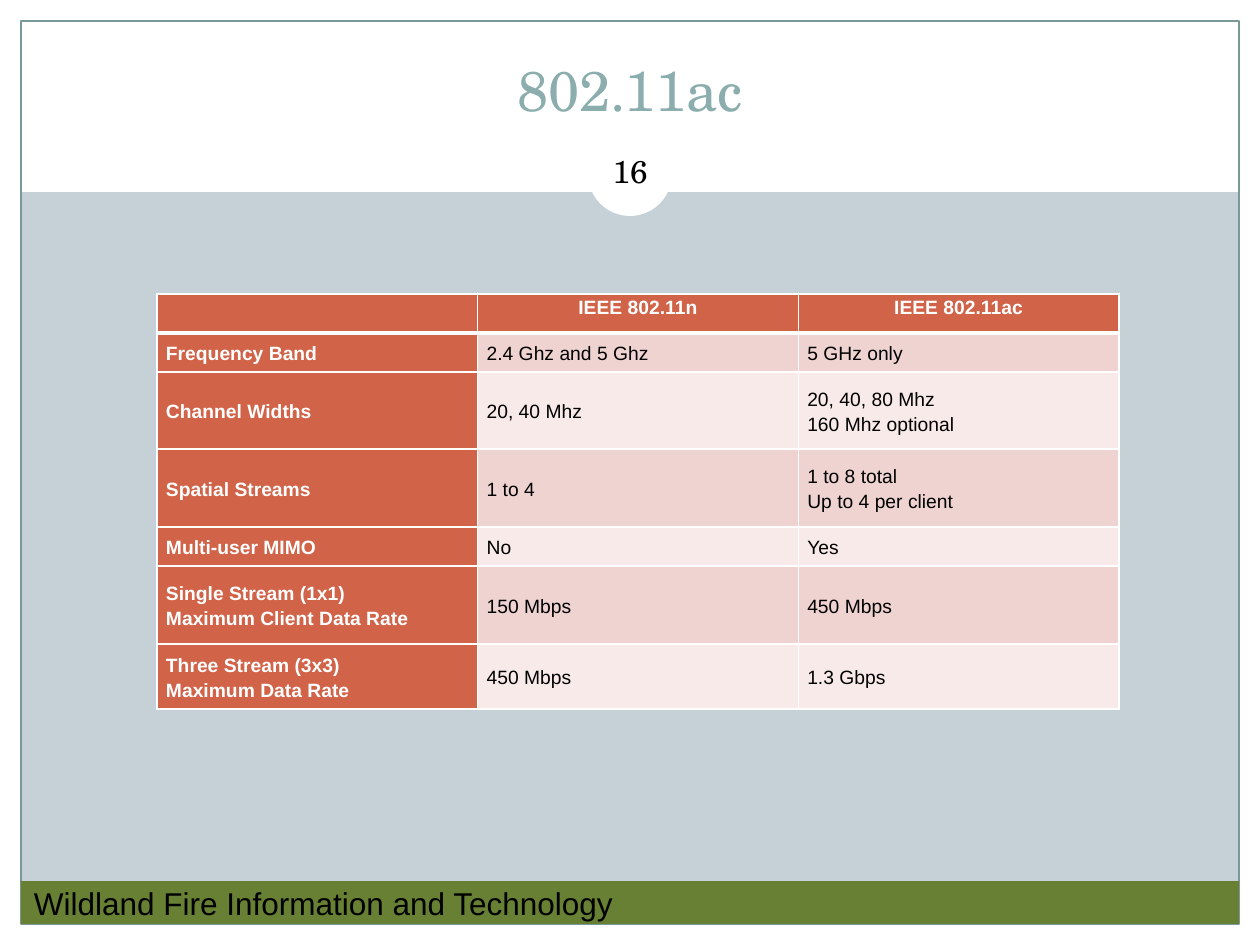
from lxml.etree import SubElement
from pptx import Presentation
from pptx.dml.color import RGBColor
from pptx.enum.shapes import MSO_SHAPE as Shape
from pptx.enum.text import MSO_ANCHOR as Anchor, PP_ALIGN as Align
from pptx.oxml.ns import qn
from pptx.util import Emu, Pt

WHITE = RGBColor(0xFF, 0xFF, 0xFF)
BLACK = RGBColor(0, 0, 0)
BACKGROUND = RGBColor(0xC5, 0xD1, 0xD7)
FRAME = RGBColor(0x7B, 0x98, 0x99)
GREEN = RGBColor(0x67, 0x80, 0x34)
TITLE = RGBColor(0x8C, 0xAD, 0xAE)
RUST = RGBColor(0xD1, 0x63, 0x49)
BANDS = (RGBColor(0xEE, 0xD3, 0xD0), RGBColor(0xF7, 0xEA, 0xE9))
SANS, SERIF = "Arial", "TeX Gyre Schola"

WIDTH, HEIGHT = 1260, 945
MARGIN = 21
ROW_HEIGHTS = (39, 39, 77, 78, 39, 78, 65)
ROWS = (
    ("", "IEEE 802.11n", "IEEE 802.11ac"),
    ("Frequency Band", "2.4 Ghz and 5 Ghz", "5 GHz only"),
    ("Channel Widths", "20, 40 Mhz", "20, 40, 80 Mhz\n160 Mhz optional"),
    ("Spatial Streams", "1 to 4", "1 to 8 total\nUp to 4 per client"),
    ("Multi-user MIMO", "No", "Yes"),
    ("Single Stream (1x1)\nMaximum Client Data Rate", "150 Mbps", "450 Mbps"),
    ("Three Stream (3x3)\nMaximum Data Rate", "450 Mbps", "1.3 Gbps"),
)


def px(length):
    return Emu(round(length * 914400 / 126))


def write(frame, text, *, size, font=SANS, color=BLACK, bold=False,
          align=Align.LEFT, anchor=Anchor.MIDDLE, spacing=None, insets=(13, 6)):
    frame.word_wrap = True
    frame.vertical_anchor = anchor
    frame.margin_left = frame.margin_right = px(insets[0])
    frame.margin_top = frame.margin_bottom = px(insets[1])
    for index, line in enumerate(text.split("\n")):
        paragraph = frame.add_paragraph() if index else frame.paragraphs[0]
        paragraph.alignment = align
        paragraph.line_spacing = spacing
        run = paragraph.add_run()
        run.text = line
        run.font.name, run.font.size = font, Pt(size)
        run.font.bold = bold
        run.font.color.rgb = color


def add_block(slide, box, fill=None, line=None, kind=Shape.RECTANGLE):
    shape = slide.shapes.add_shape(kind, *map(px, box))
    shape.shadow.inherit = False
    if fill is None:
        shape.fill.background()
    else:
        shape.fill.solid()
        shape.fill.fore_color.rgb = fill
    if line is None:
        shape.line.fill.background()
    else:
        shape.line.color.rgb = line
        shape.line.width = Pt(0.75)
    return shape


def add_label(slide, box, text, **style):
    write(slide.shapes.add_textbox(*map(px, box)).text_frame, text, **style)


def add_backdrop(slide, width, height):
    slide.background.fill.solid()
    slide.background.fill.fore_color.rgb = BACKGROUND
    for box in ((0, height - MARGIN, width, MARGIN), (0, 0, width, 192),
                (0, 0, MARGIN, height), (width - MARGIN, 0, MARGIN, height)):
        add_block(slide, box, WHITE)
    inner_width, inner_height = width - 2 * MARGIN, height - 2 * MARGIN
    add_block(slide, (MARGIN, MARGIN, inner_width, inner_height), line=FRAME)
    add_block(slide, ((width - 84) / 2, 132, 84, 84), WHITE, kind=Shape.OVAL)
    # Footer band
    footer = add_block(slide, (MARGIN, height - MARGIN - 43, inner_width, 43), GREEN)
    write(footer.text_frame, "Wildland Fire Information and Technology", size=18)


def add_heading(slide, left, top, width):
    add_label(slide, (left, top, width, 105), "802.11ac", size=32, font=SERIF,
              color=TITLE, align=Align.CENTER, anchor=Anchor.BOTTOM, insets=(13, 13))
    # Slide number
    add_label(slide, (left + (width - 92) / 2, top + 110, 92, 60), "16", size=18,
              font=SERIF, align=Align.CENTER)


def set_borders(cell, **widths):
    properties = cell._tc.get_or_add_tcPr()
    for side in "LRTB":
        line = SubElement(properties, qn(f"a:ln{side}"), w=str(Pt(widths.get(side, 1))))
        fill = SubElement(line, qn("a:solidFill"))
        SubElement(fill, qn("a:srgbClr"), val=str(WHITE))


def add_comparison(slide, left, top, width):
    box = (left, top, width, sum(ROW_HEIGHTS))
    table = slide.shapes.add_table(len(ROWS), len(ROWS[0]), *map(px, box)).table
    for column in table.columns:
        column.width = px(width / len(ROWS[0]))
    for r, (texts, height) in enumerate(zip(ROWS, ROW_HEIGHTS)):
        table.rows[r].height = px(height)
        for c, text in enumerate(texts):
            cell = table.cell(r, c)
            header, heading = r == 0, r == 0 or c == 0
            set_borders(cell, T=3 if r == 1 else 1, B=3 if header else 1)
            cell.fill.solid()
            cell.fill.fore_color.rgb = RUST if heading else BANDS[(r - 1) % 2]
            anchor = Anchor.TOP if header else Anchor.MIDDLE
            write(cell.text_frame, text, size=11, bold=heading,
                  color=WHITE if heading else BLACK, spacing=1.15,
                  align=Align.CENTER if header else Align.LEFT)
            # Cells keep their own anchor and margins
            cell.vertical_anchor = anchor
            cell.margin_left = cell.margin_right = px(9)
            cell.margin_top = cell.margin_bottom = 0


def main():
    presentation = Presentation()
    presentation.slide_width, presentation.slide_height = px(WIDTH), px(HEIGHT)
    slide = presentation.slides.add_slide(presentation.slide_layouts[6])
    add_backdrop(slide, WIDTH, HEIGHT)
    add_heading(slide, 42, 31, 1176)
    add_comparison(slide, 157, 294, 962)
    presentation.save("out.pptx")


if __name__ == "__main__":
    main()
